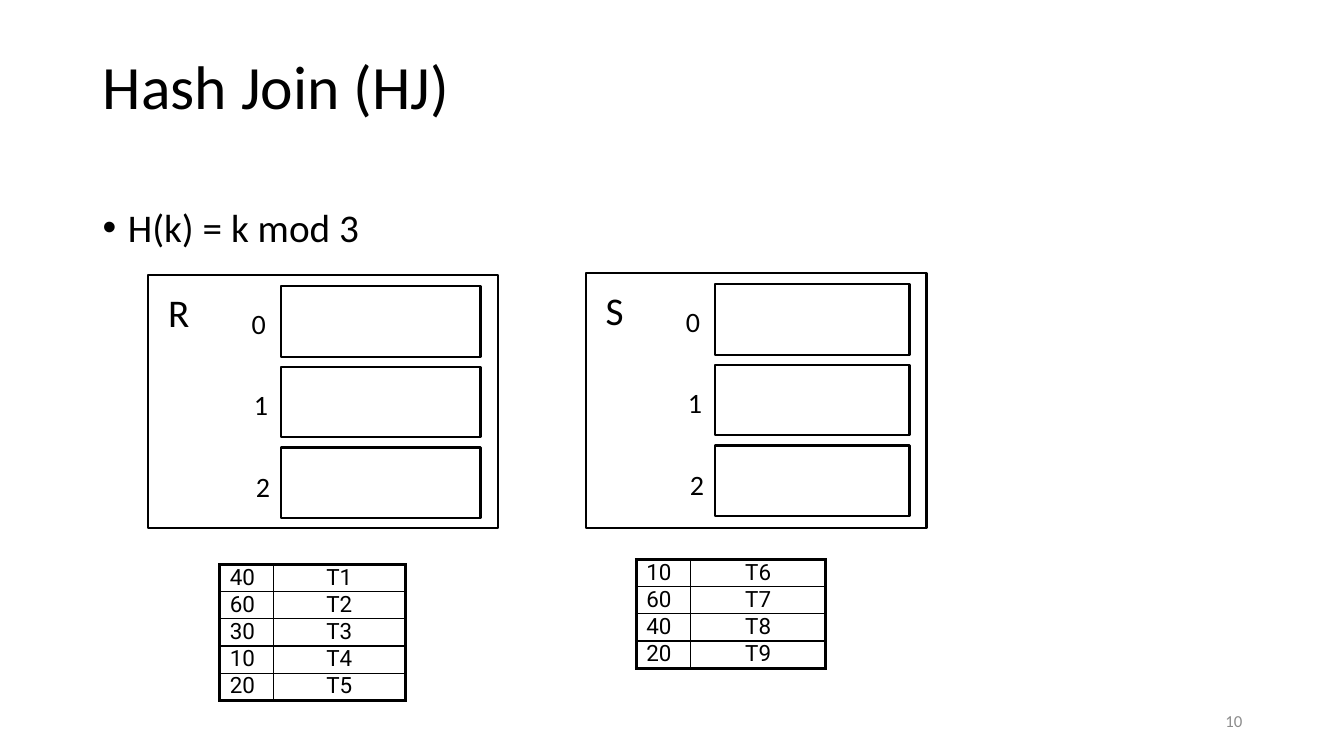
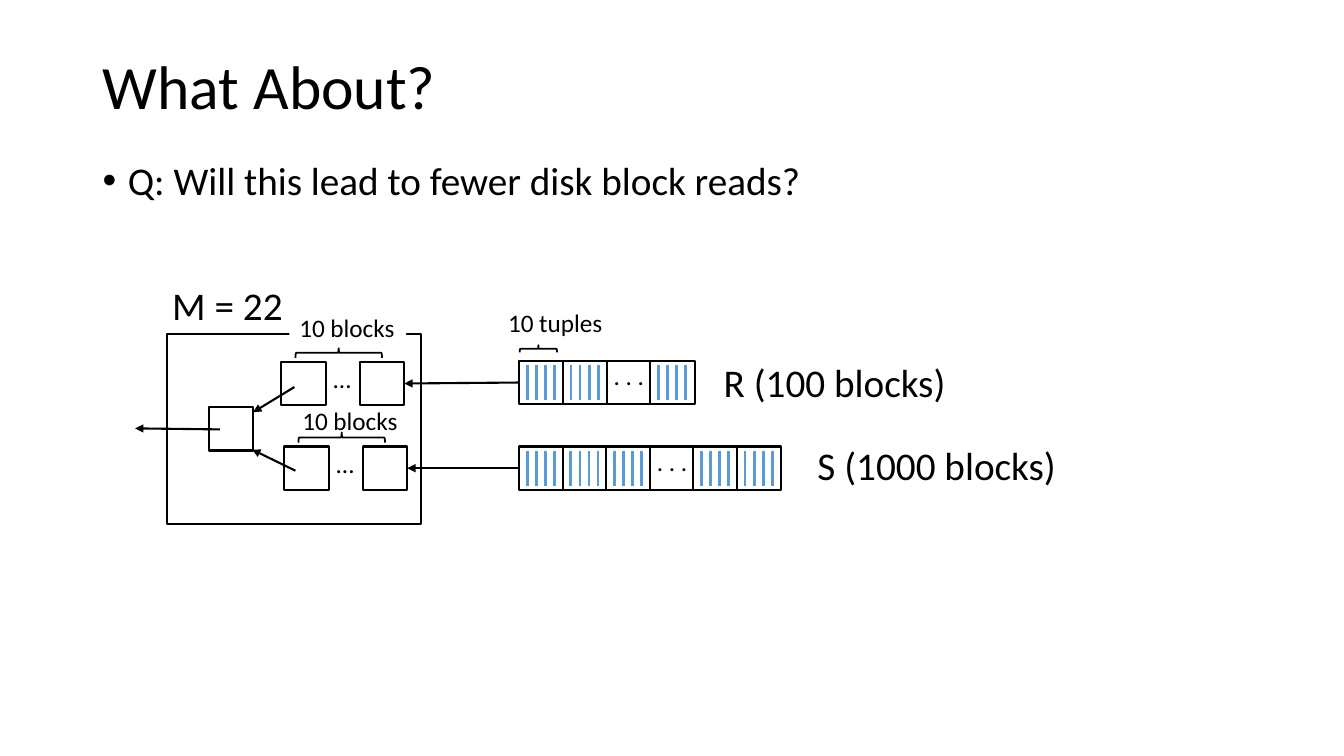
from pptx import Presentation
from pptx.dml.color import RGBColor
from pptx.enum.shapes import MSO_CONNECTOR, MSO_SHAPE
from pptx.enum.text import MSO_ANCHOR, MSO_AUTO_SIZE, PP_ALIGN
from pptx.oxml.ns import qn
from pptx.util import Inches, Pt
from lxml.etree import SubElement

BLACK = RGBColor(0x00, 0x00, 0x00)
WHITE = RGBColor(0xFF, 0xFF, 0xFF)
GRAY = RGBColor(0x8C, 0x8C, 0x8C)
BLUE = RGBColor(0x5B, 0x9B, 0xD5)
FONT = "Calibri"
CELL_W, CELL_H = 0.44, 0.43


def place(x, y, w, h):
    return [Inches(v) for v in (x, y, w, h)]


def style(para, size, color=BLACK, font=FONT, align=PP_ALIGN.LEFT):
    para.font.size = Pt(size)
    para.font.name = font
    para.font.color.rgb = color
    para.alignment = align


def label(slide, text, x, y, w, h, size, color=BLACK, align=PP_ALIGN.LEFT):
    box = slide.shapes.add_textbox(*place(x, y, w, h))
    frame = box.text_frame
    frame.word_wrap = False
    frame.text = text
    style(frame.paragraphs[0], size, color, align=align)
    return box


def rect(slide, x, y, w, h):
    shape = slide.shapes.add_shape(MSO_SHAPE.RECTANGLE, *place(x, y, w, h))
    shape.shadow.inherit = False
    shape.fill.solid()
    shape.fill.fore_color.rgb = WHITE
    shape.line.color.rgb = BLACK
    shape.line.width = Pt(1.5)
    return shape


def brace(slide, mid, y, span, depth):
    box = place(mid - depth / 2, y - span / 2, depth, span)
    shape = slide.shapes.add_shape(MSO_SHAPE.RIGHT_BRACE, *box)
    shape.rotation = 270
    shape.shadow.inherit = False
    shape.fill.background()
    shape.line.color.rgb = BLACK
    shape.line.width = Pt(1.25)


def line(slide, x1, y1, x2, y2, color=BLACK, width=1.5, arrow=False):
    link = slide.shapes.add_connector(
        MSO_CONNECTOR.STRAIGHT, *place(x1, y1, x2, y2))
    link.line.color.rgb = color
    link.line.width = Pt(width)
    if arrow:
        SubElement(link.line._ln, qn("a:tailEnd"), type="triangle")
    SubElement(link._element.spPr, qn("a:effectLst"))
    return link


def start(deck, title, bullet, top):
    slide = deck.slides.add_slide(deck.slide_layouts[5])
    head = slide.shapes.title
    head.left, head.top, head.width, head.height = place(0.92, 0.4, 11.5, 0.97)
    frame = head.text_frame
    frame.text = title
    frame.auto_size = MSO_AUTO_SIZE.NONE
    frame.vertical_anchor = MSO_ANCHOR.MIDDLE
    para = frame.paragraphs[0]
    style(para, 44)
    para.line_spacing = 0.9

    body = label(slide, bullet, 0.92, top, 11.5, 0.6, 28)
    body.text_frame.word_wrap = True
    para = body.text_frame.paragraphs[0]
    para.line_spacing = 0.9
    para.space_before = Pt(10)
    props = para._p.get_or_add_pPr()
    props.set("marL", str(Inches(0.25)))
    props.set("indent", str(Inches(-0.25)))
    SubElement(props, qn("a:buFont"), typeface="Arial")
    SubElement(props, qn("a:buChar"), char="•")
    props.append(props.find(qn("a:defRPr")))
    return slide


def buckets(slide, name, x, y, w, h):
    rect(slide, x, y, w, h)
    label(slide, name, x + 0.1, y + 0.08, 0.4, 0.57, 28)
    left = x + 0.38 * w
    for i in range(3):
        rect(slide, left, y + 0.11 + 0.8 * i, 0.57 * w, 0.7)
        label(slide, str(i), left - 0.39 + 0.02 * i, y + 0.26 + 0.81 * i,
              0.35, 0.43, 20)


def border(cell, side, width):
    edge = SubElement(cell._tc.get_or_add_tcPr(), qn("a:ln" + side),
                      w=str(Pt(width)))
    fill = SubElement(edge, qn("a:solidFill"))
    SubElement(fill, qn("a:srgbClr"), val=str(BLACK))


def tuples(slide, rows, x, y, widths):
    high = 0.27
    frame = slide.shapes.add_table(
        len(rows), 2, *place(x, y, sum(widths), high * len(rows)))
    table = frame.table
    table.first_row = table.horz_banding = False
    for col, width in zip(table.columns, widths):
        col.width = Inches(width)
    last = len(rows) - 1
    for r, row in enumerate(rows):
        for c, text in enumerate(row):
            cell = table.cell(r, c)
            outer = {"L": c == 0, "R": c == 1, "T": r == 0, "B": r == last}
            for side, edge in outer.items():
                border(cell, side, 2.25 if edge else 1)
            cell.fill.solid()
            cell.fill.fore_color.rgb = WHITE
            cell.margin_left = cell.margin_right = Inches(0.1)
            cell.margin_top = cell.margin_bottom = 0
            cell.text = text
            style(cell.text_frame.paragraphs[0], 16, font="Roboto",
                  align=PP_ALIGN.CENTER if c else PP_ALIGN.LEFT)


def disk(slide, x, y, w, count, gap):
    step = (w - CELL_W) / (count - 1)
    lefts = [x + step * i for i in range(count)]
    cells = [rect(slide, left, y, CELL_W, CELL_H) for left in lefts]
    for i, left in enumerate(lefts):
        if i == gap:
            label(slide, ". . .", left - 0.03, y - 0.05, 0.51, 0.4, 18)
            continue
        for j in range(4):
            bar = left + 0.08 + 0.09 * j
            line(slide, bar, y + 0.04, bar, y + 0.39, BLUE, 2)
    return cells[0]


def buffer(slide, x, y, rise, source, filled=False):
    rect(slide, x, y, CELL_W, CELL_H)
    last = rect(slide, x + 0.78, y, CELL_W, CELL_H)
    label(slide, "...", x + 0.41, y - 0.03, 0.39, 0.4, 18)
    brace(slide, x + 0.57, y - 0.09, 0.86, 0.1)
    note = label(slide, "10 blocks", x + 0.08, y - rise, 1.16, 0.4, 18)
    if filled:
        note.fill.solid()
        note.fill.fore_color.rgb = WHITE
    link = line(slide, 5.15, y, 4.05, y, arrow=True)
    link.begin_connect(source, 1)
    link.end_connect(last, 3)


def memory(slide, x, y, w, h, first, second):
    rect(slide, x, y, w, h)
    label(slide, "M = 22", x - 0.05, y - 0.57, 1.31, 0.57, 28)
    buffer(slide, x + 1.13, y + 0.28, 0.54, first, filled=True)
    buffer(slide, x + 1.16, y + 1.12, 0.46, second)
    rect(slide, x + 0.41, y + 0.73, CELL_W, CELL_H)
    for x1, y1, x2, y2 in [(0.52, 0.95, -0.32, 0.94),
                           (1.26, 0.53, 0.85, 0.78),
                           (1.27, 1.36, 0.84, 1.15)]:
        line(slide, x + x1, y + y1, x + x2, y + y2, arrow=True)


def hash_join(deck):
    slide = start(deck, "Hash Join (HJ)", "H(k) = k mod 3", 2.02)
    buckets(slide, "R", 1.47, 2.73, 3.47, 2.51)
    buckets(slide, "S", 5.81, 2.71, 3.38, 2.53)
    tuples(slide, [("40", "T1"), ("60", "T2"), ("30", "T3"), ("10", "T4"),
                   ("20", "T5")], 2.18, 5.6, (0.53, 1.31))
    tuples(slide, [("10", "T6"), ("60", "T7"), ("40", "T8"), ("20", "T9")],
           6.31, 5.55, (0.54, 1.34))
    page = label(slide, "10", 9.42, 6.95, 3, 0.4, 12, GRAY, PP_ALIGN.RIGHT)
    page.text_frame.word_wrap = True
    page.text_frame.vertical_anchor = MSO_ANCHOR.MIDDLE


def what_about(deck):
    slide = start(deck, "What About?",
                  "Q: Will this lead to fewer disk block reads?", 1.55)
    first = disk(slide, 5.15, 3.58, 1.74, 4, 2)
    second = disk(slide, 5.15, 4.43, 2.6, 6, 3)
    label(slide, "R (100 blocks)", 7.08, 3.51, 2.43, 0.57, 28)
    label(slide, "S (1000 blocks)", 8.01, 4.33, 2.6, 0.57, 28)
    brace(slide, 5.34, 3.46, 0.37, 0.07)
    label(slide, "10 tuples", 4.94, 3, 1.15, 0.4, 18)
    memory(slide, 1.66, 3.31, 2.52, 1.89, first, second)


def main():
    deck = Presentation()
    deck.slide_width = Inches(13.33)
    deck.slide_height = Inches(7.5)
    hash_join(deck)
    what_about(deck)
    deck.save("out.pptx")


if __name__ == "__main__":
    main()
